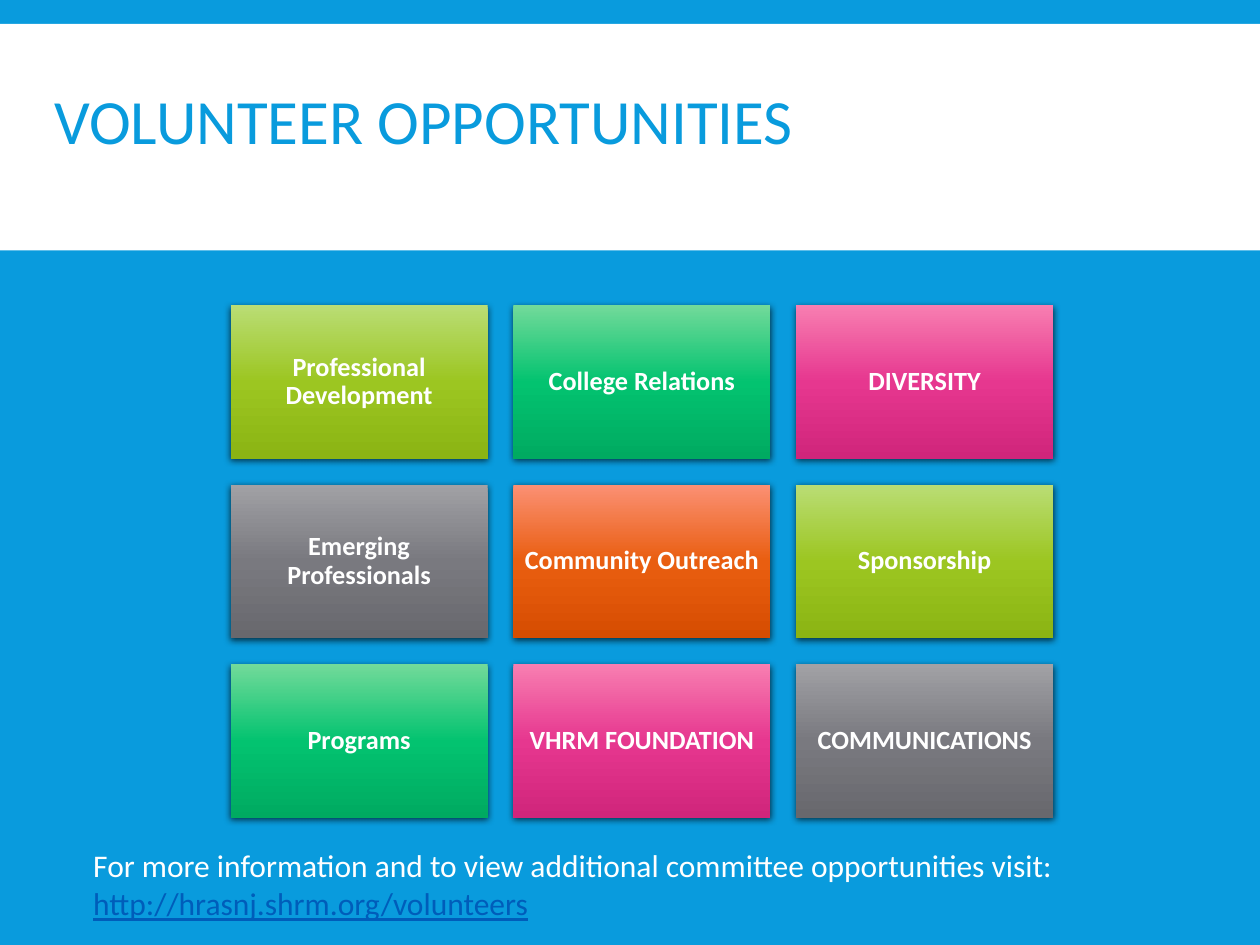
from pptx import Presentation
from pptx.dml.color import RGBColor as Rgb
from pptx.enum.shapes import MSO_SHAPE as Shape
from pptx.enum.text import MSO_ANCHOR as Anchor, MSO_AUTO_SIZE as Fit, PP_ALIGN as Align
from pptx.oxml import parse_xml
from pptx.oxml.ns import nsdecls, qn
from pptx.util import Cm, Pt
from copy import deepcopy

FONT = "Calibri"
COLORS = {"blue": "099BDD", "white": "FFFFFF", "link": "005DBA"}
# Top, middle and bottom colour of each tile gradient
FADES = {
    "lime": ("BADD75", "9CC621", "8BB413"),
    "green": ("72DA9A", "03C370", "00AA61"),
    "pink": ("F87EB1", "E6378F", "D0257B"),
    "gray": ("A1A1A5", "79797F", "68686D"),
    "orange": ("FB9074", "E95E10", "D64D01"),
}
TILES = [
    ("Professional Development", "lime"),
    ("College Relations", "green"),
    ("DIVERSITY", "pink"),
    ("Emerging Professionals", "gray"),
    ("Community Outreach", "orange"),
    ("Sponsorship", "lime"),
    ("Programs", "green"),
    ("VHRM FOUNDATION", "pink"),
    ("COMMUNICATIONS", "gray"),
]
SHADOW = (
    f'<a:outerShdw {nsdecls("a")} blurRad="{Pt(4)}" dist="{Pt(1.2)}" dir="5400000" '
    'rotWithShape="0"><a:srgbClr val="000000"><a:alpha val="68000"/></a:srgbClr></a:outerShdw>'
)


def style(font, size, color, bold=False):
    font.name, font.size, font.bold = FONT, Pt(size), bold
    font.color.rgb = Rgb.from_string(COLORS[color])


def add_rect(slide, x, y, w, h):
    rect = slide.shapes.add_shape(Shape.RECTANGLE, Cm(x), Cm(y), Cm(w), Cm(h))
    rect.line.fill.background()
    rect.shadow.inherit = False
    return rect


def fade(shape, hues):
    fill = shape.fill
    fill.gradient()
    fill.gradient_angle = 270
    first = shape.element.spPr.find(".//" + qn("a:gs"))
    first.addnext(deepcopy(first))
    for stop, hue, pos in zip(fill.gradient_stops, hues, (0, 0.5, 1)):
        stop.color.rgb = Rgb.from_string(hue)
        stop.position = pos


def add_head(slide, x, y, w, h):
    # White band behind the title
    band = add_rect(slide, x, y, w, h)
    band.fill.solid()
    band.fill.fore_color.rgb = Rgb.from_string(COLORS["white"])
    slide.shapes.element.insert(2, band.element)

    title = slide.shapes.title
    title.left, title.top = Cm(x + 0.84), Cm(y - 0.05)
    title.width, title.height = Cm(21.6), Cm(4.2)
    frame = title.text_frame
    frame.text = "VOLUNTEER OPPORTUNITIES"
    frame.auto_size = Fit.NONE
    frame.vertical_anchor = Anchor.MIDDLE
    para = frame.paragraphs[0]
    para.alignment, para.line_spacing = Align.LEFT, 0.85
    style(para.runs[0].font, 36, "blue")


def add_tile(slide, x, y, w, h, text, hues):
    tile = add_rect(slide, x, y, w, h)
    fade(tile, hues)
    effects = tile.element.spPr.find(qn("a:effectLst"))
    effects.append(parse_xml(SHADOW))
    frame = tile.text_frame
    frame.text = text
    frame.word_wrap = True
    frame.vertical_anchor = Anchor.MIDDLE
    frame.margin_left = frame.margin_right = Cm(0.15)
    frame.margin_top = frame.margin_bottom = Cm(0.15)
    para = frame.paragraphs[0]
    para.alignment, para.line_spacing = Align.CENTER, 0.9
    style(para.runs[0].font, 15, "white", bold=True)


def add_grid(slide, x, y, w, h, cols=3, gap=0.52):
    rows = len(TILES) // cols
    wide = (w - gap * (cols - 1)) / cols
    high = (h - gap * (rows - 1)) / rows
    for i, (text, hue) in enumerate(TILES):
        row, col = divmod(i, cols)
        left, top = x + col * (wide + gap), y + row * (high + gap)
        add_tile(slide, left, top, wide, high, text, FADES[hue])


def add_note(slide, x, y, w, h):
    frame = slide.shapes.add_textbox(Cm(x), Cm(y), Cm(w), Cm(h)).text_frame
    frame.word_wrap = True
    para = frame.paragraphs[0]
    para.text = "For more information and to view additional committee opportunities visit: "
    style(para.runs[0].font, 18, "white")
    link = para.add_run()
    link.text = "http://hrasnj.shrm.org/volunteers"
    style(link.font, 18, "link")
    link.font.underline = True


def main():
    deck = Presentation()
    deck.slide_width, deck.slide_height = Cm(25.4), Cm(19.05)
    slide = deck.slides.add_slide(deck.slide_layouts[5])
    back = slide.background.fill
    back.solid()
    back.fore_color.rgb = Rgb.from_string(COLORS["blue"])

    add_head(slide, 0, 0.48, 25.4, 4.57)
    add_grid(slide, 4.65, 6.15, 16.58, 10.34)
    add_note(slide, 1.63, 16.94, 23.06, 1.8)
    deck.save("out.pptx")


if __name__ == "__main__":
    main()
